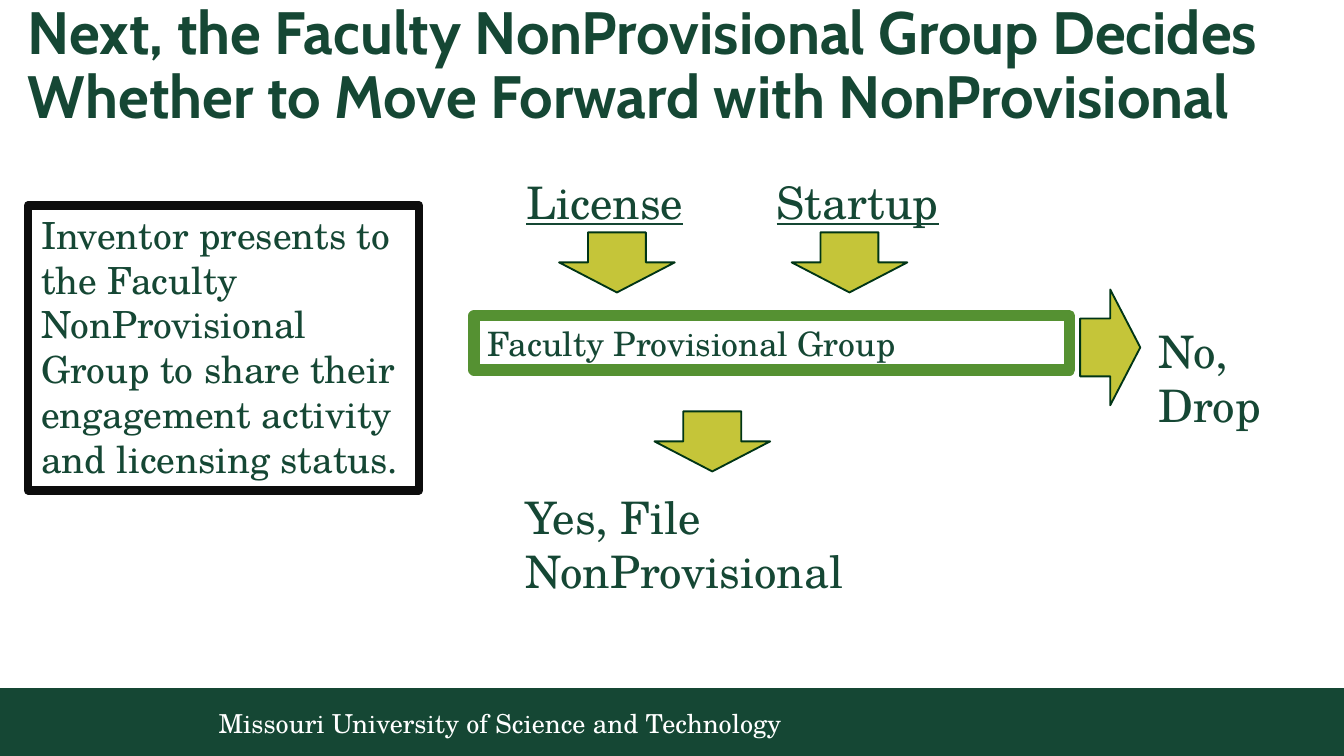
from dataclasses import dataclass

from pptx import Presentation
from pptx.dml.color import RGBColor
from pptx.enum.shapes import MSO_SHAPE
from pptx.enum.text import MSO_ANCHOR, PP_ALIGN
from pptx.util import Pt

RECT, DOWN_ARROW = MSO_SHAPE.RECTANGLE, MSO_SHAPE.DOWN_ARROW
TOP, MIDDLE = MSO_ANCHOR.TOP, MSO_ANCHOR.MIDDLE
LEFT = PP_ALIGN.LEFT
BLANK_LAYOUT = 6


@dataclass(frozen=True)
class Theme:
    head_font: str = "Cabin"
    body_font: str = "TeX Gyre Schola"
    green: str = "154734"
    leaf: str = "559132"
    lime: str = "C5C539"
    arrow_edge: str = "003516"
    black: str = "0D0D0D"
    white: str = "FFFFFF"
    title: int = 32
    label: int = 24
    note: int = 20
    group: int = 18
    footer: int = 14


class SlideBuilder:
    def __init__(self, prs, theme):
        self.theme = theme
        self.s = prs.slides.add_slide(prs.slide_layouts[BLANK_LAYOUT])

    def shape(self, kind, box, fill=None, line=None, weight=1):
        sp = self.s.shapes.add_shape(kind, *map(Pt, box))
        sp.shadow.inherit = False
        if fill:
            sp.fill.solid()
            sp.fill.fore_color.rgb = RGBColor.from_string(fill)
        else:
            sp.fill.background()
        if line:
            sp.line.color.rgb = RGBColor.from_string(line)
            sp.line.width = Pt(weight)
        else:
            sp.line.fill.background()
        return sp

    def set_text(self, sp, text, size, color=None, anchor=TOP):
        """Put one left-aligned paragraph in a shape and return the paragraph."""
        tf = sp.text_frame
        tf.text = text
        tf.word_wrap = True
        tf.vertical_anchor = anchor
        p = tf.paragraphs[0]
        p.alignment = LEFT
        font = p.runs[0].font
        font.name = self.theme.body_font
        font.size = Pt(size)
        font.color.rgb = RGBColor.from_string(color or self.theme.green)
        return p

    def text(self, box, text, size, color=None, anchor=TOP):
        sp = self.s.shapes.add_textbox(*map(Pt, box))
        return sp, self.set_text(sp, text, size, color, anchor)

    def title(self, box, text):
        sp, p = self.text(box, text, self.theme.title)
        tf = sp.text_frame
        tf.margin_left = tf.margin_right = tf.margin_top = tf.margin_bottom = 0
        p.line_spacing = 0.9
        p.runs[0].font.name = self.theme.head_font
        p.runs[0].font.bold = True

    def label(self, box, text, underline=False):
        _, p = self.text(box, text, self.theme.label)
        p.runs[0].font.underline = underline

    def framed_text(self, box, text, size, line, weight):
        sp = self.shape(RECT, box, line=line, weight=weight)
        self.set_text(sp, text, size)

    def arrow(self, left, top, rotation=0):
        sp = self.shape(DOWN_ARROW, (left, top, 62, 32.2),
                        self.theme.lime, self.theme.arrow_edge)
        sp.rotation = rotation

    def footer(self, text):
        self.shape(RECT, (-3, 368.6, 723, 36.7), self.theme.green)
        self.text((110, 373, 457, 29), text, self.theme.footer,
                  self.theme.white, MIDDLE)


def main():
    prs = Presentation()
    prs.slide_width, prs.slide_height = Pt(720), Pt(405)
    theme = Theme()
    b = SlideBuilder(prs, theme)

    b.footer("Missouri University of Science and Technology")
    b.title((15, 1.5, 695.5, 28),
            "Next, the Faculty NonProvisional Group Decides "
            "Whether to Move Forward with NonProvisional")

    b.label((409, 90, 240.5, 36), "Startup", underline=True)
    b.label((275, 90, 141, 36), "License", underline=True)
    b.label((274.3, 259, 273, 36), "Yes, File NonProvisional")
    b.label((613.4, 170, 110, 36), "No, Drop")

    b.framed_text((254, 169.2, 319, 29), "Faculty Provisional Group",
                  theme.group, theme.leaf, 6)
    for left, top in ((299.5, 124.5), (424.1, 124.5), (350.6, 220.4)):
        b.arrow(left, top)
    b.arrow(563.8, 170, rotation=270)

    b.framed_text((15, 110, 209.5, 152.7),
                  "Inventor presents to the Faculty NonProvisional Group to "
                  "share their engagement activity and licensing status.",
                  theme.note, theme.black, 4.5)

    prs.save("out.pptx")


if __name__ == "__main__":
    main()
